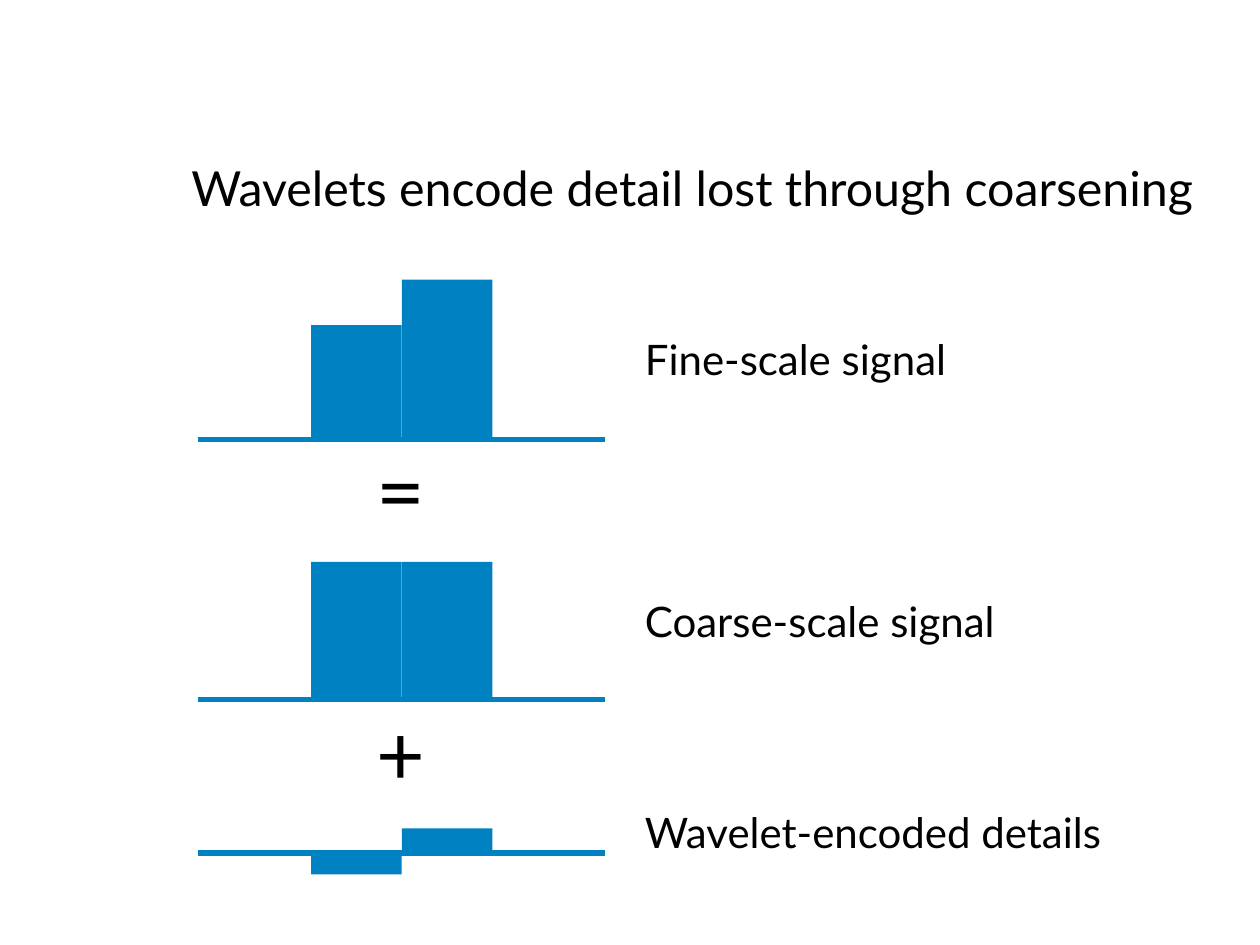
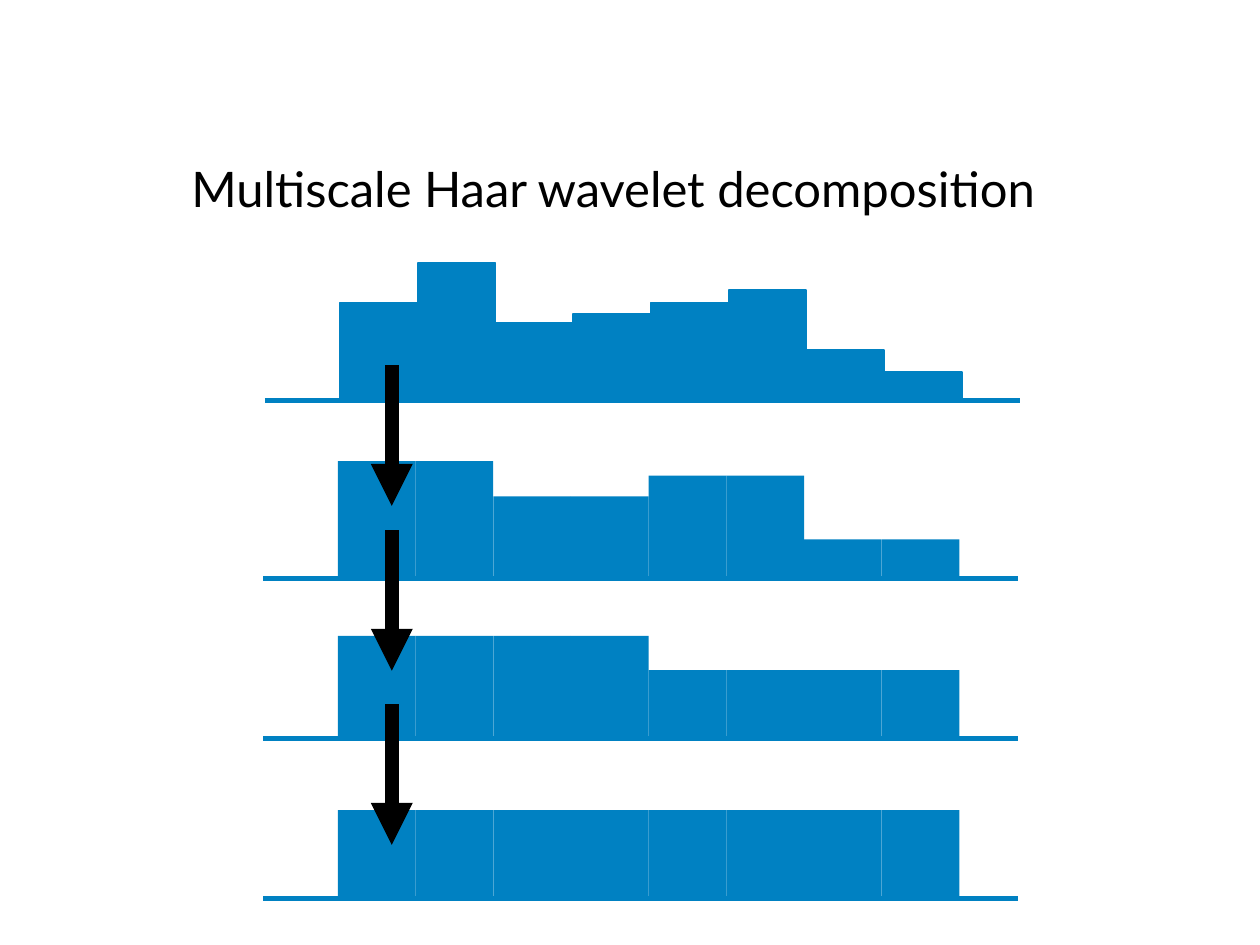
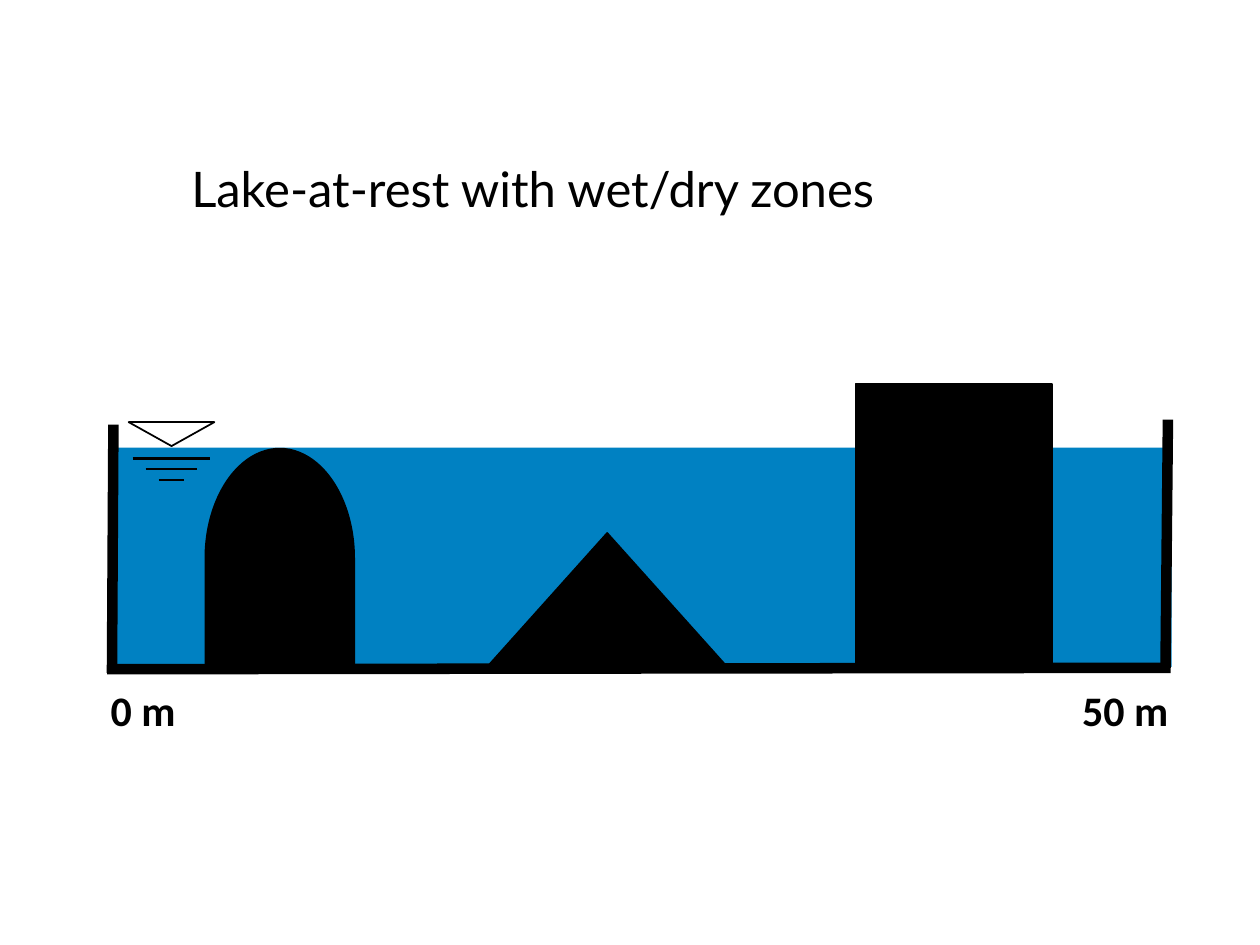
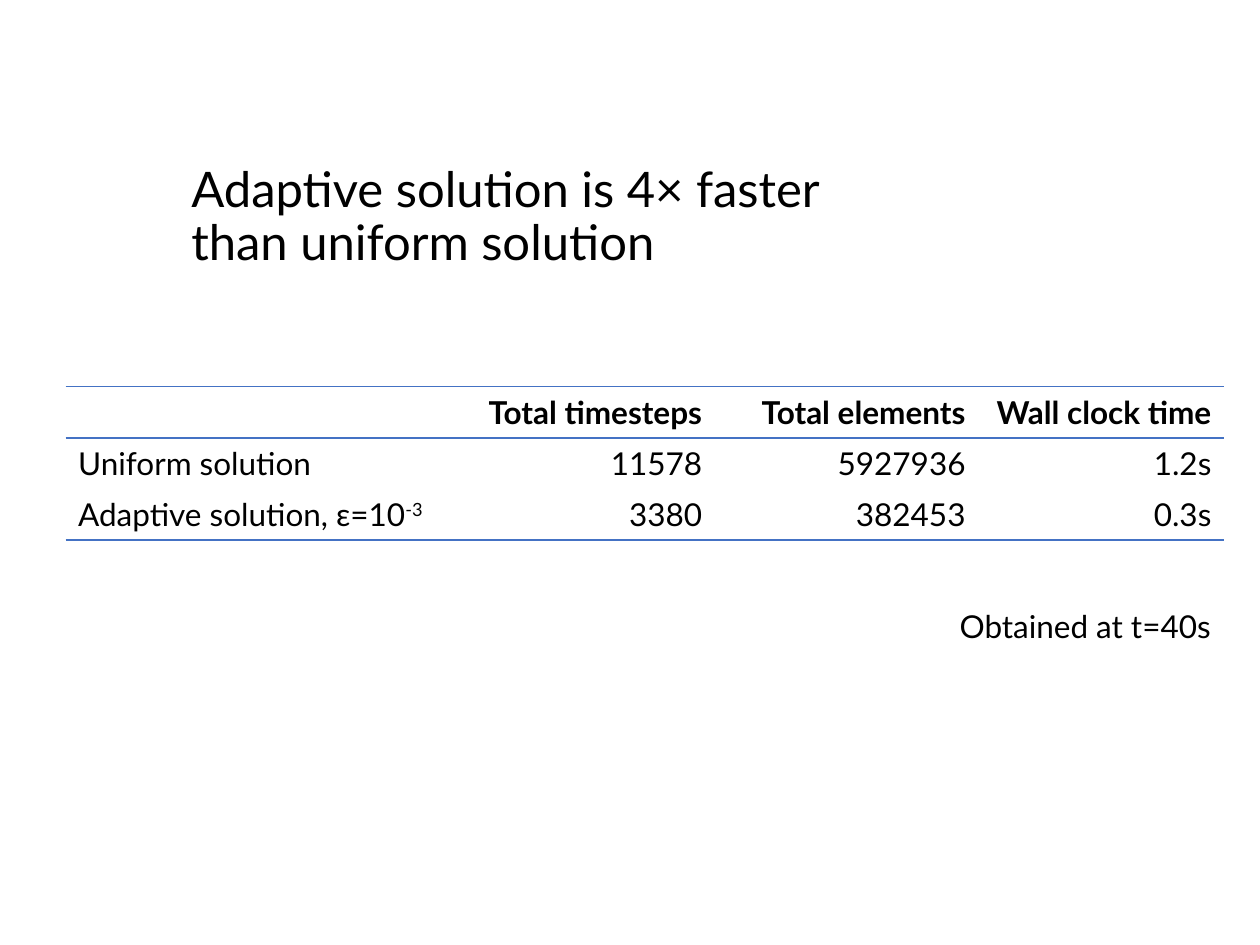
from lxml.etree import SubElement
from pptx import Presentation
from pptx.dml.color import RGBColor
from pptx.enum.shapes import MSO_CONNECTOR as Connector, MSO_SHAPE as Preset
from pptx.enum.text import MSO_ANCHOR as Anchor, PP_ALIGN as Align
from pptx.oxml.ns import qn
from pptx.util import Pt

BLUE, BLACK, RULE = "0081C2", "000000", "4472C4"
NO_STYLE = "{2D5ABB26-0587-4C30-8999-92F81FD0307C}"


def colour(value):
    """Turn a hex string into a colour."""
    return RGBColor.from_string(value)


class Deck:
    """Holds the shared style and the page being drawn."""

    def __init__(self):
        """Start an empty 10 by 7.5 inch deck."""
        self.deck = Presentation()
        self.deck.slide_width, self.deck.slide_height = Pt(720), Pt(540)
        self.page = None

    def add_page(self, title, size=28, width=597):
        """Start a blank page with a title."""
        self.page = self.deck.slides.add_slide(self.deck.slide_layouts[6])
        para = self.text(title, 102.24, 90.72, width, 42.5, size)
        para.line_spacing = 0.9

    def style(self, para, size, align=Align.LEFT, bold=False, font="Lato"):
        """Set alignment and font on a paragraph."""
        para.alignment = align
        para.font.name, para.font.size, para.font.bold = font, Pt(size), bold
        para.font.color.rgb = colour(BLACK)

    def text(self, words, left, top, width, height, size=24, **look):
        """Add a text box and return its paragraph."""
        box = self.page.shapes.add_textbox(Pt(left), Pt(top), Pt(width), Pt(height))
        box.text_frame.word_wrap = True
        box.text_frame.vertical_anchor = Anchor.TOP
        para = box.text_frame.paragraphs[0]
        para.text = words
        self.style(para, size, **look)
        return para

    def shape(self, preset, left, top, width, height, fill=BLACK, edge=None, turn=0):
        """Add a preset shape, with a 1 pt outline when edge is given."""
        shape = self.page.shapes.add_shape(preset, Pt(left), Pt(top), Pt(width), Pt(height))
        shape.shadow.inherit = False
        shape.rotation = turn
        if fill:
            shape.fill.solid()
            shape.fill.fore_color.rgb = colour(fill)
        else:
            shape.fill.background()
        if edge:
            shape.line.color.rgb = colour(edge)
            shape.line.width = Pt(1)
        else:
            shape.line.fill.background()

    def line(self, start, end, weight, ink=BLACK, arrow=False):
        """Add a straight line, with an arrowhead at its end if wanted."""
        points = [Pt(value) for value in (*start, *end)]
        line = self.page.shapes.add_connector(Connector.STRAIGHT, *points)
        line.line.color.rgb = colour(ink)
        line.line.width = Pt(weight)
        if arrow:
            SubElement(line.line._get_or_add_ln(), qn("a:tailEnd"), type="triangle")
        SubElement(line._element.spPr, qn("a:effectLst"))

    def signal(self, left, baseline, step, heights, before, after, edge=None):
        """Draw bars above or below a baseline that runs past both ends."""
        for index, height in enumerate(heights):
            top = baseline - max(height, 0)
            self.shape(Preset.RECTANGLE, left + index * step, top, step, abs(height), BLUE, edge)
        right = left + len(heights) * step + after
        self.line((left - before, baseline), (right, baseline), 3, BLUE)

    def border(self, cell, side):
        """Rule one side of a table cell."""
        edge = SubElement(cell._tc.get_or_add_tcPr(), qn("a:" + side), w=str(Pt(1)))
        SubElement(SubElement(edge, qn("a:solidFill")), qn("a:srgbClr"), val=RULE)

    def table(self, rows, left, top, widths, row_height):
        """Add a table ruled above and below its header and at its foot."""
        frame = self.page.shapes.add_table(
            len(rows), len(widths), Pt(left), Pt(top), Pt(sum(widths)), Pt(row_height * len(rows)))
        table = frame.table
        table.horz_banding = False
        table._tbl.tblPr.find(qn("a:tableStyleId")).text = NO_STYLE
        for column, width in zip(table.columns, widths):
            column.width = Pt(width)
        rules = {0: ("lnT", "lnB"), len(rows) - 1: ("lnB",)}
        for r, row in enumerate(rows):
            table.rows[r].height = Pt(row_height)
            for c, words in enumerate(row):
                cell = table.cell(r, c)
                for side in rules.get(r, ()):
                    self.border(cell, side)
                cell.fill.background()
                para = cell.text_frame.paragraphs[0]
                base, _, power = words.partition("^")
                para.text = base
                if power:
                    span = para.add_run()
                    span.text = power
                    span._r.get_or_add_rPr().set("baseline", "30000")
                self.style(para, 18, Align.RIGHT if c else Align.LEFT, bold=r == 0)


def wavelet_page(deck):
    """Show a fine signal as a coarse signal plus details."""
    deck.add_page("Wavelets encode detail lost through coarsening", 27.6, 611)
    signals = [
        ("Fine-scale signal", 187.2, 251.28, (65.5, 91.4)),
        ("Coarse-scale signal", 337, 399.6, (78.5, 78.5)),
        ("Wavelet-encoded details", 457.2, 487.44, (-12.24, 14)),
    ]
    for label, top, baseline, heights in signals:
        deck.signal(177.8, baseline, 51.8, heights, 64.8, 64.4)
        deck.text(label, 361.44, top, 277, 36)
    for sign, top in (("=", 247), ("+", 397.44)):
        deck.text(sign, 130.3, top, 198, 65.5, 48, align=Align.CENTER)


def decomposition_page(deck):
    """Show a signal coarsened three times."""
    deck.add_page("Multiscale Haar wavelet decomposition")
    step = 44.4
    fine = (56.2, 78.5, 44.6, 49.7, 56.2, 63.4, 28.8, 16.6)
    deck.signal(194.4, 229, step, fine, 43, 33, BLUE)
    coarser = [(330.5, (67, 46.8, 58.7, 22.3)), (422, (58.7, 39)), (513.4, (50.4,))]
    for baseline, levels in coarser:
        repeat = len(fine) // len(levels)
        heights = [level for level in levels for _ in range(repeat)]
        deck.signal(193.1, baseline, step, heights, 42.6, 33.4)
    for top in (208.8, 303, 402.5):
        deck.line((223.9, top), (223.9, top + 80.3), 8, arrow=True)


def lake_page(deck):
    """Show a still lake over three obstacles."""
    deck.add_page("Lake-at-rest with wet/dry zones")
    deck.shape(Preset.RECTANGLE, 64, 255.8, 605.5, 125.3, BLUE)
    deck.shape(Preset.ISOSCELES_TRIANGLE, 278.6, 304.6, 136.8, 76.3, edge=BLACK)
    deck.shape(Preset.RECTANGLE, 488.9, 219.6, 112.3, 162, edge=BLACK)
    deck.shape(Preset.FLOWCHART_DELAY, 97.2, 276.5, 125.3, 85, edge=BLACK, turn=270)
    deck.line((668.9, 381.6), (61.2, 382.4), 6)
    deck.line((666, 381.6), (667.4, 239.8), 6)
    deck.line((64, 384.5), (64.8, 242.6), 6)
    deck.shape(Preset.ISOSCELES_TRIANGLE, 73.5, 241.2, 49, 13.7, None, BLACK, 180)
    for index in range(3):
        half, level = 22 - 7.4 * index, 262 + 6.1 * index
        deck.line((97.8 - half, level), (97.8 + half, level), 1.5)
    for words, left, width in (("0 m", 56.16, 57), ("50 m", 611.3, 64)):
        deck.text(words, left, 387.4, width, 36, bold=True, font="Calibri")


def results_page(deck):
    """Compare the cost of the two solutions."""
    deck.add_page("Adaptive solution is 4× faster\nthan uniform solution")
    rows = [
        ("", "Total timesteps", "Total elements", "Wall clock time"),
        ("Uniform solution", "11578", "5927936", "1.2s"),
        ("Adaptive solution, ε=10^-3", "3380", "382453", "0.3s"),
    ]
    deck.table(rows, 37.44, 221, (219, 152, 150.5, 140.5), 29.2)
    deck.text("Obtained at t=40s", 468, 343.44, 231, 29, 18, align=Align.RIGHT)


def main():
    """Build and save the four pages."""
    deck = Deck()
    for draw in (wavelet_page, decomposition_page, lake_page, results_page):
        draw(deck)
    deck.deck.save("out.pptx")


if __name__ == "__main__":
    main()
